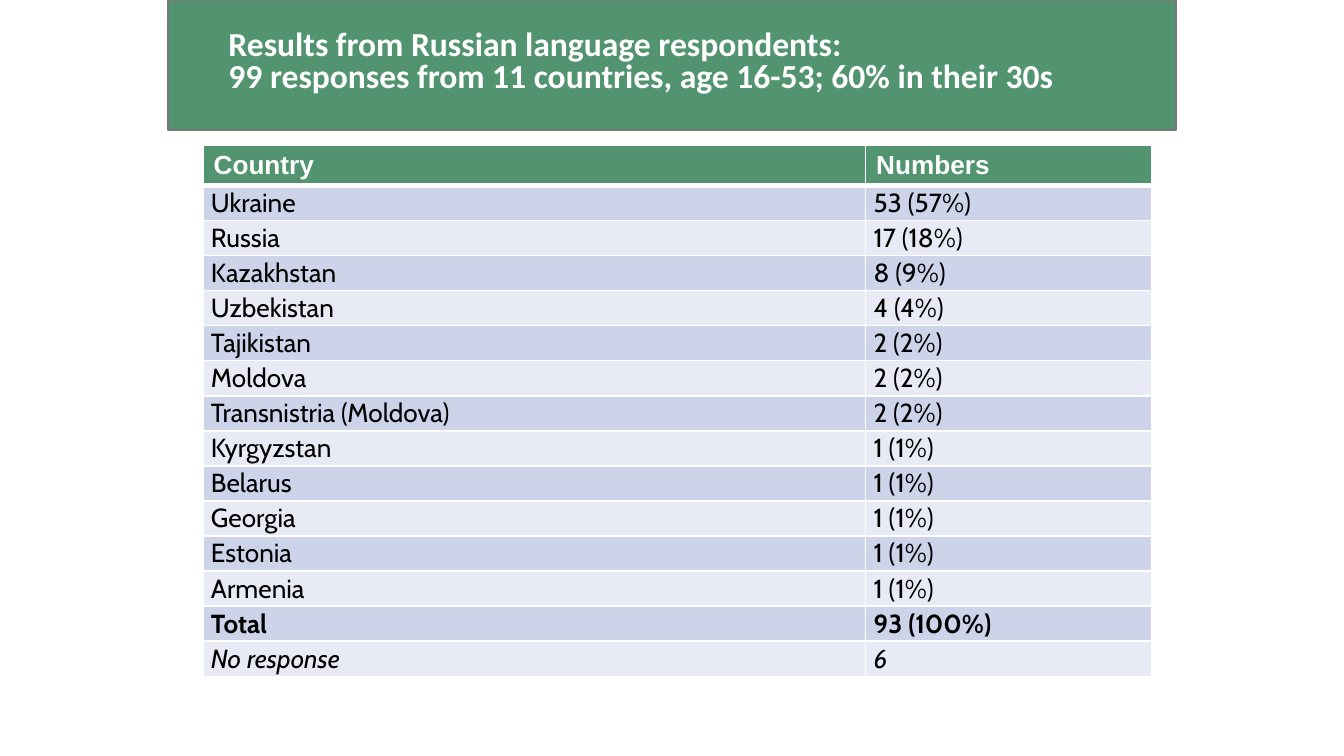
from pptx import Presentation
from pptx.dml.color import RGBColor
from pptx.enum.shapes import MSO_SHAPE
from pptx.enum.text import MSO_ANCHOR, MSO_AUTO_SIZE, PP_ALIGN
from pptx.oxml.ns import qn
from pptx.util import Inches, Pt
from lxml.etree import SubElement

# Content
TITLE = [
    "Results from Russian language respondents:",
    "99 responses from 11 countries, age 16-53; 60% in their 30s",
]
HEADER = ("Country", "Numbers")
COUNTRIES = [
    ("Ukraine", "53 (57%)"),
    ("Russia", "17 (18%)"),
    ("Kazakhstan", "8 (9%)"),
    ("Uzbekistan", "4 (4%)"),
    ("Tajikistan", "2 (2%)"),
    ("Moldova", "2 (2%)"),
    ("Transnistria (Moldova)", "2 (2%)"),
    ("Kyrgyzstan", "1 (1%)"),
    ("Belarus", "1 (1%)"),
    ("Georgia", "1 (1%)"),
    ("Estonia", "1 (1%)"),
    ("Armenia", "1 (1%)"),
]
TOTAL = ("Total", "93 (100%)")
NO_RESPONSE = ("No response", "6")

THEME = {
    "green": "51946F", "outline": "787878", "white": "FFFFFF", "text": "000000",
    "bands": ("CDD4EA", "E8EBF5"),
    "title_font": "Calibri", "header_font": "Arial", "body_font": "Cabin",
    "title_size": 18, "table_size": 14,
}
COL_WIDTHS = (4.93, 2.13)
TABLE_HEIGHT = 3.92


def rgb(value):
    return RGBColor.from_string(value)


def set_font(p, name, size, color, bold=False, italic=False):
    f = p.font
    f.name, f.size, f.bold, f.italic = name, Pt(size), bold, italic
    f.color.rgb = rgb(color)


def set_margins(target, x, y):
    target.margin_left = target.margin_right = Inches(x)
    target.margin_top = target.margin_bottom = Inches(y)


def set_borders(cell, top=1, bottom=1):
    tc_pr = cell._tc.get_or_add_tcPr()
    widths = {"a:lnL": 1, "a:lnR": 1, "a:lnT": top, "a:lnB": bottom}
    for i, (tag, width) in enumerate(widths.items()):
        ln = SubElement(tc_pr, qn(tag), w=str(Pt(width)))
        fill = SubElement(ln, qn("a:solidFill"))
        SubElement(fill, qn("a:srgbClr"), val=THEME["white"])
        tc_pr.insert(i, ln)


# Widescreen slide, 16:9
prs = Presentation()
prs.slide_width = Inches(10)
prs.slide_height = Inches(10 * 9 / 16)
slide = prs.slides.add_slide(prs.slide_layouts[5])

# Green band, placed behind the title
band = slide.shapes.add_shape(MSO_SHAPE.RECTANGLE, Inches(1.25), 0, Inches(7.5), Inches(0.97))
band.shadow.inherit = False
band.fill.solid()
band.fill.fore_color.rgb = rgb(THEME["green"])
band.line.color.rgb = rgb(THEME["outline"])
band.line.width = Pt(1)
title = slide.shapes.title
title._element.addprevious(band._element)

# Title
title.left, title.top = Inches(1.62), Inches(0.1)
title.width, title.height = Inches(6.75), Inches(0.74)
tf = title.text_frame
tf.word_wrap = True
tf.auto_size = MSO_AUTO_SIZE.NONE
tf.vertical_anchor = MSO_ANCHOR.MIDDLE
set_margins(tf, 0.08, 0.04)
tf.text = "\n".join(TITLE)
for p in tf.paragraphs:
    p.alignment = PP_ALIGN.LEFT
    p.line_spacing = 0.8
    p.space_before = Pt(0)
    set_font(p, THEME["title_font"], THEME["title_size"], THEME["white"], bold=True)

# Country table
rows = [HEADER, *COUNTRIES, TOTAL, NO_RESPONSE]
table = slide.shapes.add_table(
    len(rows), len(HEADER), Inches(1.51), Inches(1.08),
    Inches(sum(COL_WIDTHS)), Inches(TABLE_HEIGHT)).table
for column, width in zip(table.columns, COL_WIDTHS):
    column.width = Inches(width)
for r, row in enumerate(rows):
    is_header = r == 0
    for c, text in enumerate(row):
        cell = table.cell(r, c)
        cell.text = text
        p = cell.text_frame.paragraphs[0]
        cell.fill.solid()
        if is_header:
            cell.fill.fore_color.rgb = rgb(THEME["green"])
            set_margins(cell, 0.08, 0.04)
            set_font(p, THEME["header_font"], THEME["table_size"], THEME["white"], bold=True)
        else:
            cell.fill.fore_color.rgb = rgb(THEME["bands"][(r - 1) % 2])
            cell.vertical_anchor = MSO_ANCHOR.MIDDLE
            set_margins(cell, 0.06, 0)
            set_font(p, THEME["body_font"], THEME["table_size"], THEME["text"],
                     bold=row is TOTAL, italic=row is NO_RESPONSE)
        set_borders(cell, top=3 if r == 1 else 1, bottom=3 if is_header else 1)

prs.save("out.pptx")
